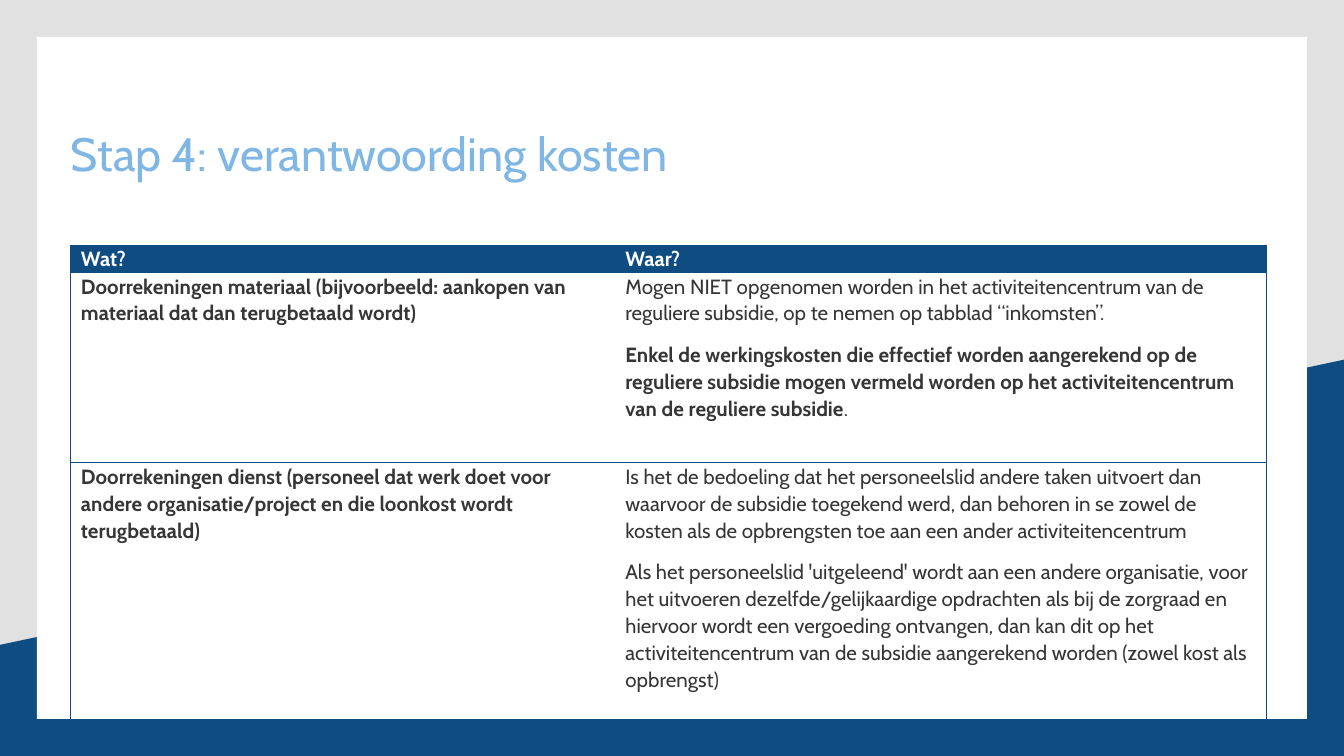
from lxml import etree
from pptx import Presentation
from pptx.dml.color import RGBColor
from pptx.enum.shapes import MSO_SHAPE
from pptx.enum.text import MSO_ANCHOR
from pptx.oxml.ns import qn
from pptx.util import Cm, Pt

RECTANGLE = MSO_SHAPE.RECTANGLE
TOP = MSO_ANCHOR.TOP
NAVY, LIGHT_BLUE, WHITE = "0F4C81", "80B6E4", "FFFFFF"
DARK_GREY, LIGHT_GREY = "373636", "E1E1E1"
FONT = "Cabin"


def color(value):
    return RGBColor.from_string(value)


def write_text(frame, paragraphs, size, text_color, line_spacing, space_after=0):
    """Each paragraph is a list of (text, bold) pairs."""
    frame.word_wrap = True
    for index, runs in enumerate(paragraphs):
        paragraph = frame.add_paragraph() if index else frame.paragraphs[0]
        paragraph.line_spacing = line_spacing
        paragraph.space_after = Pt(space_after)
        for text, bold in runs:
            run = paragraph.add_run()
            run.text = text
            run.font.name = FONT
            run.font.size = Pt(size)
            run.font.bold = bold
            run.font.color.rgb = color(text_color)


presentation = Presentation()
presentation.slide_width = Cm(25.4)
presentation.slide_height = Cm(14.29)
slide = presentation.slides.add_slide(presentation.slide_layouts[6])

# Background with a slanted navy band and a white panel
slide.background.fill.solid()
slide.background.fill.fore_color.rgb = color(LIGHT_GREY)

builder = slide.shapes.build_freeform(Cm(25.4), Cm(6.8))
builder.add_line_segments(
    [(Cm(25.4), Cm(14.29)), (Cm(0), Cm(14.29)), (Cm(0), Cm(12.19))], close=True)
band = builder.convert_to_shape()
panel = slide.shapes.add_shape(RECTANGLE, Cm(0.7), Cm(0.7), Cm(24), Cm(12.89))
for shape, fill_color in ((band, NAVY), (panel, WHITE)):
    shape.shadow.inherit = False
    shape.fill.solid()
    shape.fill.fore_color.rgb = color(fill_color)
    shape.line.fill.background()

# Cost table
rows = [
    [
        [[("Wat?", True)]],
        [[("Waar?", True)]],
    ],
    [
        [[("Doorrekeningen materiaal (bijvoorbeeld: aankopen van materiaal dat "
           "dan terugbetaald wordt)", True)]],
        [[("Mogen NIET opgenomen worden in het activiteitencentrum van de "
           "reguliere subsidie, op te nemen op tabblad “inkomsten”.", False)],
         [("Enkel de werkingskosten die effectief worden aangerekend op de "
           "reguliere subsidie mogen vermeld worden op het "
           "activiteitencentrum van de reguliere subsidie", True),
          (".", False)]],
    ],
    [
        [[("Doorrekeningen dienst (personeel dat werk doet voor andere "
           "organisatie/project en die loonkost wordt terugbetaald)", True)]],
        [[("Is het de bedoeling dat het personeelslid andere taken uitvoert dan "
           "waarvoor de subsidie toegekend werd, dan behoren in se zowel de "
           "kosten als de opbrengsten toe aan een ander activiteitencentrum",
           False)],
         [("Als het personeelslid 'uitgeleend' wordt aan een andere "
           "organisatie, voor het uitvoeren dezelfde/gelijkaardige opdrachten "
           "als bij de zorgraad en hiervoor wordt een vergoeding ontvangen, dan "
           "kan dit op het activiteitencentrum van de subsidie aangerekend "
           "worden (zowel kost als opbrengst)", False)]],
    ],
]
column_widths = [10.29, 12.3]
row_heights = [0.52, 3.6, 4.92]

table = slide.shapes.add_table(
    len(rows), len(column_widths), Cm(1.34), Cm(4.63),
    Cm(sum(column_widths)), Cm(sum(row_heights))).table
table.horz_banding = False
for column, width in zip(table.columns, column_widths):
    column.width = Cm(width)
for row, height in zip(table.rows, row_heights):
    row.height = Cm(height)

for row_index, row in enumerate(rows):
    is_header = row_index == 0
    for column_index, paragraphs in enumerate(row):
        cell = table.cell(row_index, column_index)
        cell.margin_left = cell.margin_right = Cm(0.19)
        cell.margin_top = cell.margin_bottom = 0
        cell.vertical_anchor = TOP
        write_text(cell.text_frame, paragraphs, size=11,
                   text_color=WHITE if is_header else DARK_GREY,
                   line_spacing=1.07, space_after=8)

        # Lines run around the table and between rows, not between columns
        properties = cell._tc.get_or_add_tcPr()
        for side, visible in (("L", column_index == 0), ("R", column_index == 1),
                              ("T", True), ("B", True)):
            border = etree.SubElement(properties, qn(f"a:ln{side}"), w=str(Pt(0.5)))
            if visible:
                fill = etree.SubElement(border, qn("a:solidFill"))
                etree.SubElement(fill, qn("a:srgbClr"), val=NAVY)
            else:
                etree.SubElement(border, qn("a:noFill"))

        if is_header:
            cell.fill.solid()
            cell.fill.fore_color.rgb = color(NAVY)
        else:
            cell.fill.background()

# Title
title = slide.shapes.add_textbox(Cm(1.34), Cm(2.49), Cm(16.61), Cm(1.78))
frame = title.text_frame
frame.margin_left = frame.margin_right = frame.margin_top = frame.margin_bottom = 0
frame.vertical_anchor = TOP
write_text(frame, [[("Stap 4: verantwoording kosten", False)]], size=25,
           text_color=LIGHT_BLUE, line_spacing=0.9)

presentation.save("out.pptx")
